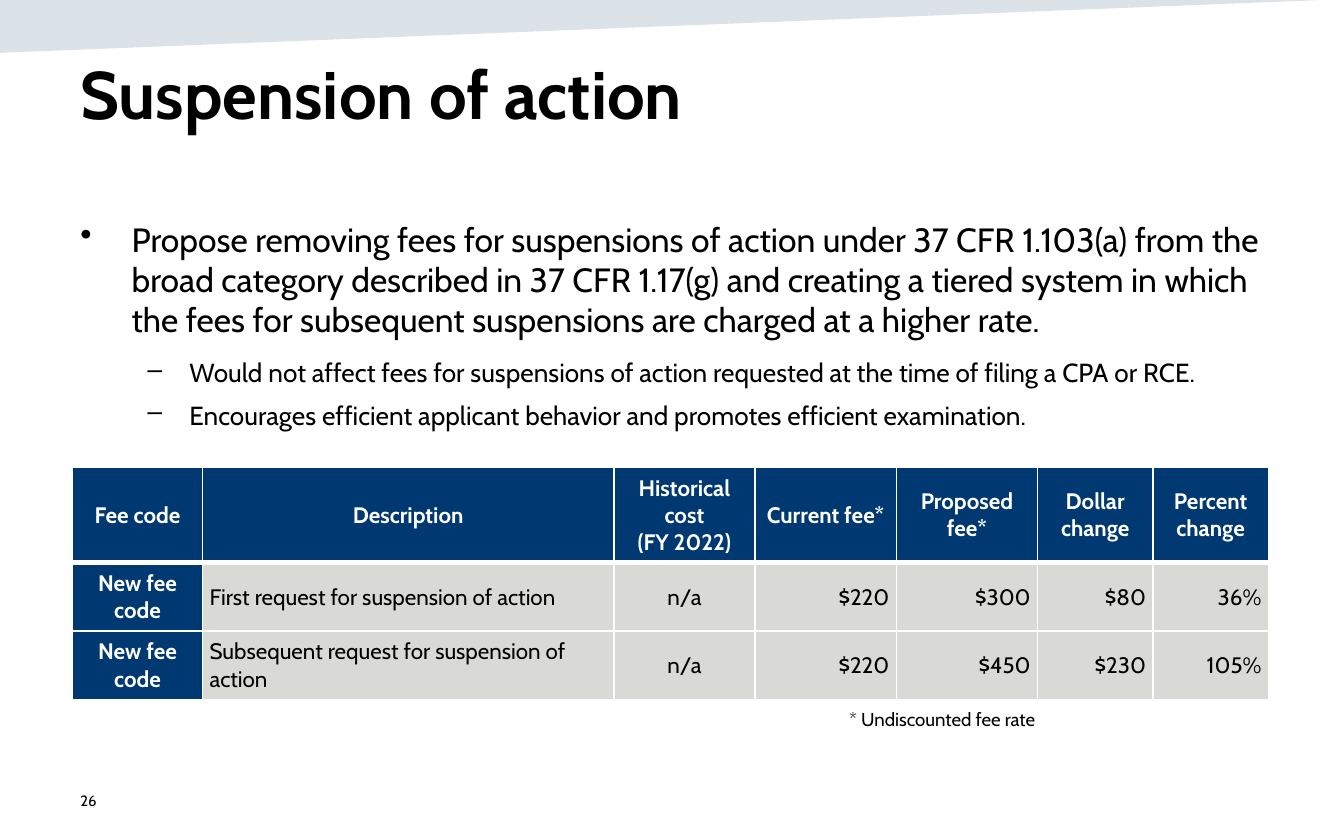
from lxml import etree
from pptx import Presentation
from pptx import util as u
from pptx.dml import color
from pptx.enum import text
from pptx.oxml import ns

COLORS = {"ink": "000000", "paper": "FFFFFF", "navy": "003971",
          "gray": "D9D9D6", "band": "164469"}
LEFT, MID, RIGHT = (text.PP_ALIGN.LEFT, text.PP_ALIGN.CENTER,
                    text.PP_ALIGN.RIGHT)
TOP, CENTER = text.MSO_ANCHOR.TOP, text.MSO_ANCHOR.MIDDLE
HEAD = ["Fee code", "Description", "Historical cost\n(FY 2022)", "Current fee*",
        "Proposed fee*", "Dollar change", "Percent change"]
ROWS = [
    HEAD,
    ["New fee code", "First request for suspension of action",
     "n/a", "$220", "$300", "$80", "36%"],
    ["New fee code", "Subsequent request for suspension of action",
     "n/a", "$220", "$450", "$230", "105%"],
]
ALIGNS = [MID, LEFT, MID, RIGHT, RIGHT, RIGHT, RIGHT]
WIDTHS = [2.46, 7.77, 2.67, 2.67, 2.67, 2.18, 2.18]
HEIGHTS = [1.8, 1.29, 1.29]
POINTS = [
    ("Propose removing fees for suspensions of action under 37 CFR 1.103(a) "
     "from the broad category described in 37 CFR 1.17(g) and creating a "
     "tiered system in which the fees for subsequent suspensions are charged "
     "at a higher rate.", 18, 9, "•", 0.97, 0.97),
    ("Would not affect fees for suspensions of action requested at the time "
     "of filing a CPA or RCE.", 14, 9, "–", 2.06, 0.79),
    ("Encourages efficient applicant behavior and promotes efficient "
     "examination.", 14, 6, "–", 2.06, 0.79),
]


def apply(item, form):
    for key, value in form.items():
        setattr(item, key, value)


def tint(fill, name):
    fill.solid()
    fill.fore_color.rgb = color.RGBColor.from_string(COLORS[name])


def write(para, words, size, ink="ink", bold=False, align=LEFT):
    para.alignment = align
    run = para.add_run()
    run.text = words
    apply(run.font, {"name": "Cabin", "size": u.Pt(size), "bold": bold})
    run.font.color.rgb = color.RGBColor.from_string(COLORS[ink])


def add_box(slide, left, top, width, height, anchor=TOP):
    box = slide.shapes.add_textbox(*map(u.Cm, (left, top, width, height)))
    frame = box.text_frame
    apply(frame, {"word_wrap": True, "vertical_anchor": anchor})
    return frame


def add_band(slide):
    pen = slide.shapes.build_freeform(0, 0, scale=u.Cm(1))
    pen.add_line_segments([(0, 0.81), (25.45, -0.03)], close=True)
    band = pen.convert_to_shape()
    band.shadow.inherit = False
    tint(band.fill, "band")
    band.line.fill.background()
    shade = band.fill._xPr.find(".//" + ns.qn("a:srgbClr"))
    etree.SubElement(shade, ns.qn("a:alpha"), val="15000")


def add_points(slide):
    frame = add_box(slide, 1.27, 4.01, 22.86, 5.44)
    for i, (words, size, gap, mark, left, hang) in enumerate(POINTS):
        para = frame.add_paragraph() if i else frame.paragraphs[0]
        write(para, words, size)
        para.space_before = u.Pt(gap)
        props = para._p.get_or_add_pPr()
        props.set("marL", str(u.Cm(left)))
        props.set("indent", str(-u.Cm(hang)))
        etree.SubElement(props, ns.qn("a:buChar"), char=mark)


def edge(cell, sides):
    props = cell._tc.get_or_add_tcPr()
    for side, width in sides.items():
        line = etree.SubElement(props, ns.qn("a:ln" + side),
                                w=str(u.Pt(width)))
        fill = etree.SubElement(line, ns.qn("a:solidFill"))
        etree.SubElement(fill, ns.qn("a:srgbClr"), val=COLORS["paper"])


def fill_cell(cell, words, row, col):
    key = row == 0 or col == 0
    pad = u.Cm(0.13)
    apply(cell, {"margin_left": pad, "margin_right": pad, "margin_top": pad,
                 "margin_bottom": pad, "vertical_anchor": CENTER})
    edge(cell, {"L": 1, "R": 1, "T": 3 if row == 1 else 1,
                "B": 3 if row == 0 else 1})
    tint(cell.fill, "navy" if key else "gray")
    frame = cell.text_frame
    for i, part in enumerate(words.split("\n")):
        para = frame.add_paragraph() if i else frame.paragraphs[0]
        write(para, part, 12, "paper" if key else "ink", key,
              ALIGNS[col] if row else MID)


def add_fees(slide):
    frame = slide.shapes.add_table(
        len(ROWS), len(HEAD), u.Cm(1.37), u.Cm(8.84),
        u.Cm(sum(WIDTHS)), u.Cm(sum(HEIGHTS)))
    table = frame.table
    apply(table, {"first_row": False, "horz_banding": False})
    for col, width in zip(table.columns, WIDTHS):
        col.width = u.Cm(width)
    for row, height in zip(table.rows, HEIGHTS):
        row.height = u.Cm(height)
    for r, row in enumerate(ROWS):
        for c, words in enumerate(row):
            fill_cell(table.cell(r, c), words, r, c)


def main():
    deck = Presentation()
    apply(deck, {"slide_width": u.Cm(25.4), "slide_height": u.Cm(15.88)})
    slide = deck.slides.add_slide(deck.slide_layouts[6])
    add_band(slide)
    title = add_box(slide, 1.27, 0.86, 22.86, 2.64)
    write(title.paragraphs[0], "Suspension of action", 36, bold=True)
    add_points(slide)
    add_fees(slide)
    note = add_box(slide, 14.27, 13.26, 5.54, 0.69)
    write(note.paragraphs[0], "* Undiscounted fee rate", 10, align=RIGHT)
    page = add_box(slide, 1.27, 14.71, 5.72, 0.84, CENTER)
    write(page.paragraphs[0], "26", 8)
    deck.save("out.pptx")


if __name__ == "__main__":
    main()
